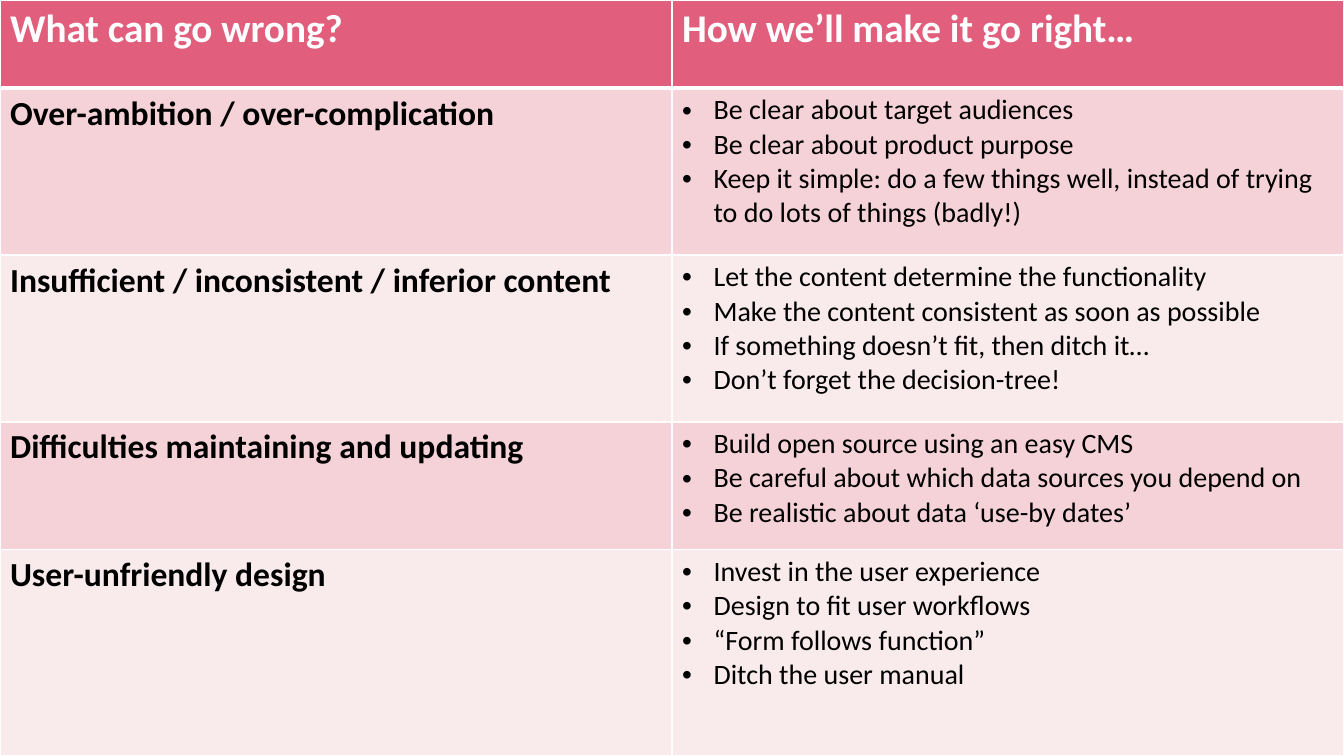
from dataclasses import dataclass

from lxml.etree import SubElement
from pptx import Presentation
from pptx.dml.color import RGBColor
from pptx.oxml.ns import qn
from pptx.util import Pt

COLOURS = {
    "header": "E15F7D",
    "dark band": "F4D2D7",
    "light band": "F9EAEC",
    "border": "FFFFFF",
    "header text": "FFFFFF",
    "text": "000000",
}
SLIDE_WIDTH, SLIDE_HEIGHT = Pt(960), Pt(540)
HEADER_HEIGHT = Pt(63)
BULLET_INDENT = Pt(22.5)
HEADINGS = ("What can go wrong?", "How we’ll make it go right…")


@dataclass(frozen=True)
class Pitfall:
    name: str
    solutions: tuple[str, ...]
    height: float


PITFALLS = (
    Pitfall("Over-ambition / over-complication", (
        "Be clear about target audiences",
        "Be clear about product purpose",
        "Keep it simple: do a few things well, instead of trying to do lots of things (badly!)",
    ), 119.2),
    Pitfall("Insufficient / inconsistent / inferior content", (
        "Let the content determine the functionality",
        "Make the content consistent as soon as possible",
        "If something doesn’t fit, then ditch it…",
        "Don’t forget the decision-tree!",
    ), 119.2),
    Pitfall("Difficulties maintaining and updating", (
        "Build open source using an easy CMS",
        "Be careful about which data sources you depend on",
        "Be realistic about data ‘use-by dates’",
    ), 91.4),
    Pitfall("User-unfriendly design", (
        "Invest in the user experience",
        "Design to fit user workflows",
        "“Form follows function”",
        "Ditch the user manual",
    ), 147.2),
)


def add_bullet(paragraph) -> None:
    properties = paragraph._p.get_or_add_pPr()
    properties.set("marL", str(BULLET_INDENT))
    properties.set("indent", str(-BULLET_INDENT))
    SubElement(properties, qn("a:buFont"), typeface="Arial")
    SubElement(properties, qn("a:buChar"), char="•")


def set_borders(cell, top: float = 1, bottom: float = 1) -> None:
    properties = cell._tc.get_or_add_tcPr()
    widths = {"a:lnL": 1, "a:lnR": 1, "a:lnT": top, "a:lnB": bottom}
    for tag, width in widths.items():
        line = SubElement(properties, qn(tag), w=str(Pt(width)))
        fill = SubElement(line, qn("a:solidFill"))
        SubElement(fill, qn("a:srgbClr"), val=COLOURS["border"])


def fill_cell(cell, lines: tuple[str, ...], fill: str, size: float,
              colour: str = "text", bold: bool = True, bullets: bool = False) -> None:
    cell.fill.solid()
    cell.fill.fore_color.rgb = RGBColor.from_string(COLOURS[fill])
    cell.text_frame.text = "\n".join(lines)
    for paragraph in cell.text_frame.paragraphs:
        if bullets:
            add_bullet(paragraph)
        font = paragraph.font
        font.name, font.size, font.bold = "Calibri", Pt(size), bold
        font.color.rgb = RGBColor.from_string(COLOURS[colour])


def main() -> None:
    presentation = Presentation()
    presentation.slide_width, presentation.slide_height = SLIDE_WIDTH, SLIDE_HEIGHT
    slide = presentation.slides.add_slide(presentation.slide_layouts[6])

    # Full-slide table
    table = slide.shapes.add_table(
        len(PITFALLS) + 1, len(HEADINGS), Pt(0), Pt(0), SLIDE_WIDTH, SLIDE_HEIGHT).table

    # Header row
    table.rows[0].height = HEADER_HEIGHT
    for column, heading in enumerate(HEADINGS):
        cell = table.cell(0, column)
        set_borders(cell, bottom=3)
        fill_cell(cell, (heading,), "header", 28, "header text")

    # One banded row for each pitfall
    for row, pitfall in enumerate(PITFALLS, start=1):
        table.rows[row].height = Pt(pitfall.height)
        band = "dark band" if row % 2 else "light band"
        name_cell, solutions_cell = table.cell(row, 0), table.cell(row, 1)
        for cell in (name_cell, solutions_cell):
            set_borders(cell, top=3 if row == 1 else 1)
        fill_cell(name_cell, (pitfall.name,), band, 24)
        fill_cell(solutions_cell, pitfall.solutions, band, 20, bold=False, bullets=True)

    presentation.save("out.pptx")


if __name__ == "__main__":
    main()
